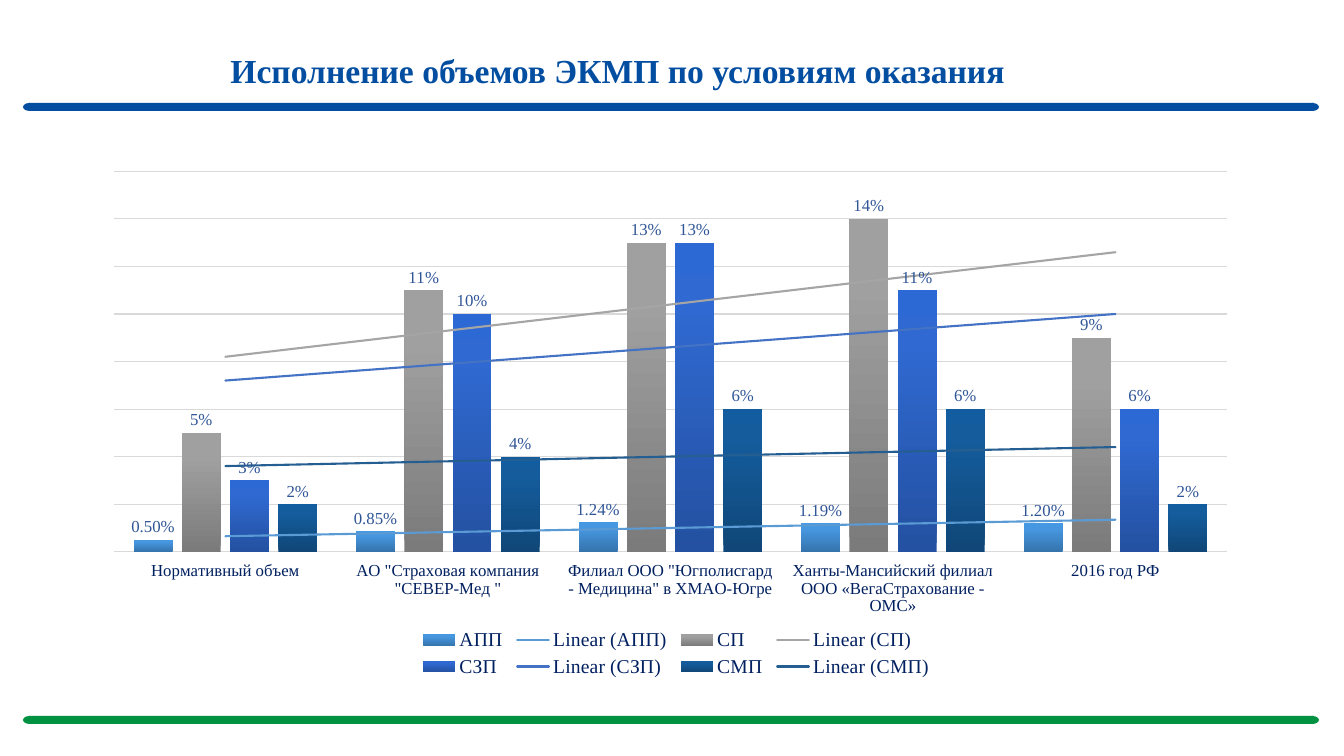
from copy import deepcopy

from lxml.etree import SubElement
from pptx import Presentation
from pptx.chart.data import CategoryChartData
from pptx.dml.color import RGBColor
from pptx.enum.chart import (XL_CHART_TYPE, XL_LABEL_POSITION, XL_LEGEND_POSITION,
                             XL_TICK_LABEL_POSITION, XL_TICK_MARK)
from pptx.enum.shapes import MSO_SHAPE
from pptx.enum.text import MSO_ANCHOR, PP_ALIGN
from pptx.oxml.ns import qn
from pptx.util import Emu, Pt

PX = 914400 / 100.8
SERIF = "Times New Roman"
BLUE, GREEN, NAVY, LABEL, GRID = "034EA1", "009240", "002060", "2F5597", "D9D9D9"

CATEGORIES = [
    "Нормативный объем",
    'АО "Страховая компания "СЕВЕР-Мед "',
    'Филиал ООО "Югполисгард - Медицина" в ХМАО-Югре',
    "Ханты-Мансийский филиал ООО «ВегаСтрахование - ОМС»",
    "2016 год РФ",
]
SERIES = [
    ("АПП", [0.005, 0.0085, 0.0124, 0.0119, 0.012], "0.00%",
     ["3674AD", "4697E0", "4498E4"], "5B9BD5"),
    ("СП", [0.05, 0.11, 0.13, 0.14, 0.09], "0%",
     ["7B7B7B", "A0A0A0", "A1A1A1"], "A5A5A5"),
    ("СЗП", [0.03, 0.1, 0.13, 0.11, 0.06], "0%",
     ["2451A1", "2F69D1", "2C69D5"], "4472C4"),
    ("СМП", [0.02, 0.04, 0.06, 0.06, 0.02], "0%",
     ["104778", "145C9C", "125CA0"], "255E91"),
]


def px(*lengths):
    return [Emu(round(length * PX)) for length in lengths]


def color(code):
    return RGBColor.from_string(code)


def set_attributes(target, **values):
    for name, value in values.items():
        setattr(target, name, value)


def set_font(font, size, code, **values):
    set_attributes(font, size=Pt(size), **{"name": SERIF, **values})
    font.color.rgb = color(code)


def set_line(line, width, code):
    line.width = Pt(width)
    line.color.rgb = color(code)


def add_rounded_rule(page, top, code):
    parts = [(MSO_SHAPE.RECTANGLE, 29, 1285), (MSO_SHAPE.OVAL, 23, 13),
             (MSO_SHAPE.OVAL, 1306, 13)]
    for kind, left, width in parts:
        shape = page.shapes.add_shape(kind, *px(left, top, width, 8))
        shape.shadow.inherit = False
        shape.fill.solid()
        shape.fill.fore_color.rgb = color(code)
        shape.line.fill.background()


def add_title(page, text):
    box = page.shapes.add_textbox(*px(49, 13, 1137, 83))
    set_attributes(box.text_frame, word_wrap=True, vertical_anchor=MSO_ANCHOR.BOTTOM)
    para = box.text_frame.paragraphs[0]
    set_attributes(para, alignment=PP_ALIGN.CENTER, line_spacing=0.9)
    span = para.add_run()
    span.text = text
    set_font(span.font, 24, BLUE, bold=True)


def add_elements(parent, values):
    for tag, value in values.items():
        SubElement(parent, qn(tag)).set("val", str(value))


def set_layout(element, previous, x, y, w, h, inner=False):
    for old in element.findall(qn("c:layout")):
        element.remove(old)
    layout = SubElement(element, qn("c:layout"))
    if previous is None:
        element.insert(0, layout)
    else:
        previous.addnext(layout)
    manual = SubElement(layout, qn("c:manualLayout"))
    if inner:
        add_elements(manual, {"c:layoutTarget": "inner"})
    add_elements(manual, {"c:xMode": "edge", "c:yMode": "edge",
                          "c:x": x, "c:y": y, "c:w": w, "c:h": h})


def fill_gradient(series, codes):
    fill = series.format.fill
    fill.gradient()
    fill.gradient_angle = 90
    stops = series._element.find(".//" + qn("a:gsLst"))
    stops.append(deepcopy(stops[-1]))
    for stop, position, code in zip(fill.gradient_stops, (0, 0.8, 1), codes):
        stop.position = position
        stop.color.rgb = color(code)


def add_trendline(series, code):
    element = series._element
    trend = SubElement(element, qn("c:trendline"))
    element.find(qn("c:cat")).addprevious(trend)
    properties = SubElement(trend, qn("c:spPr"))
    line = SubElement(properties, qn("a:ln"), w=str(Pt(1.5)), cap="rnd")
    solid = SubElement(line, qn("a:solidFill"))
    SubElement(solid, qn("a:srgbClr")).set("val", code)
    add_elements(trend, {"c:trendlineType": "linear", "c:dispRSqr": 0, "c:dispEq": 0})


def style_series(series, number_format, gradient, trend_code):
    series.invert_if_negative = False
    fill_gradient(series, gradient)
    labels = series.data_labels
    set_attributes(labels, show_value=True, number_format=number_format,
                   number_format_is_linked=False,
                   position=XL_LABEL_POSITION.OUTSIDE_END)
    set_font(labels.font, 12, LABEL)
    add_trendline(series, trend_code)


def style_axes(chart):
    values = chart.value_axis
    set_attributes(values, visible=False, has_major_gridlines=True,
                   minimum_scale=0, maximum_scale=0.16, major_unit=0.02)
    set_line(values.major_gridlines.format.line, 0.75, GRID)
    values.tick_labels.number_format = "0.00%"
    values.tick_labels.number_format_is_linked = False
    names = chart.category_axis
    set_attributes(names, major_tick_mark=XL_TICK_MARK.NONE,
                   minor_tick_mark=XL_TICK_MARK.NONE,
                   tick_label_position=XL_TICK_LABEL_POSITION.LOW)
    set_line(names.format.line, 1, GRID)
    set_font(names.tick_labels.font, 12, NAVY)


def add_volume_chart(page):
    data = CategoryChartData(number_format="0.00%")
    data.categories = CATEGORIES
    for name, values, *_ in SERIES:
        data.add_series(name, values)
    chart = page.shapes.add_chart(
        XL_CHART_TYPE.COLUMN_CLUSTERED, *px(91, 161, 1159, 521), data).chart
    set_font(chart.font, 10, "000000", name="Calibri")
    set_attributes(chart, has_title=False, has_legend=True)
    set_attributes(chart.plots[0], gap_width=100, overlap=-24,
                   vary_by_categories=False)
    style_axes(chart)
    for series, (_, _, *style) in zip(chart.plots[0].series, SERIES):
        style_series(series, *style)
    legend = chart.legend
    set_attributes(legend, position=XL_LEGEND_POSITION.BOTTOM, include_in_layout=False)
    set_font(legend.font, 14, NAVY)
    area = chart._chartSpace.find(".//" + qn("c:plotArea"))
    set_layout(area, None, 0.02, 0.02, 0.96, 0.73, inner=True)
    set_layout(legend._element, legend._element.find(qn("c:legendPos")),
               0.28, 0.89, 0.45, 0.11)


def main():
    deck = Presentation()
    deck.slide_width, deck.slide_height = px(1344, 756)
    page = deck.slides.add_slide(deck.slide_layouts[6])
    for top, code in ((103, BLUE), (716, GREEN)):
        add_rounded_rule(page, top, code)
    add_title(page, "Исполнение объемов ЭКМП по условиям оказания")
    add_volume_chart(page)
    deck.save("out.pptx")


if __name__ == "__main__":
    main()
